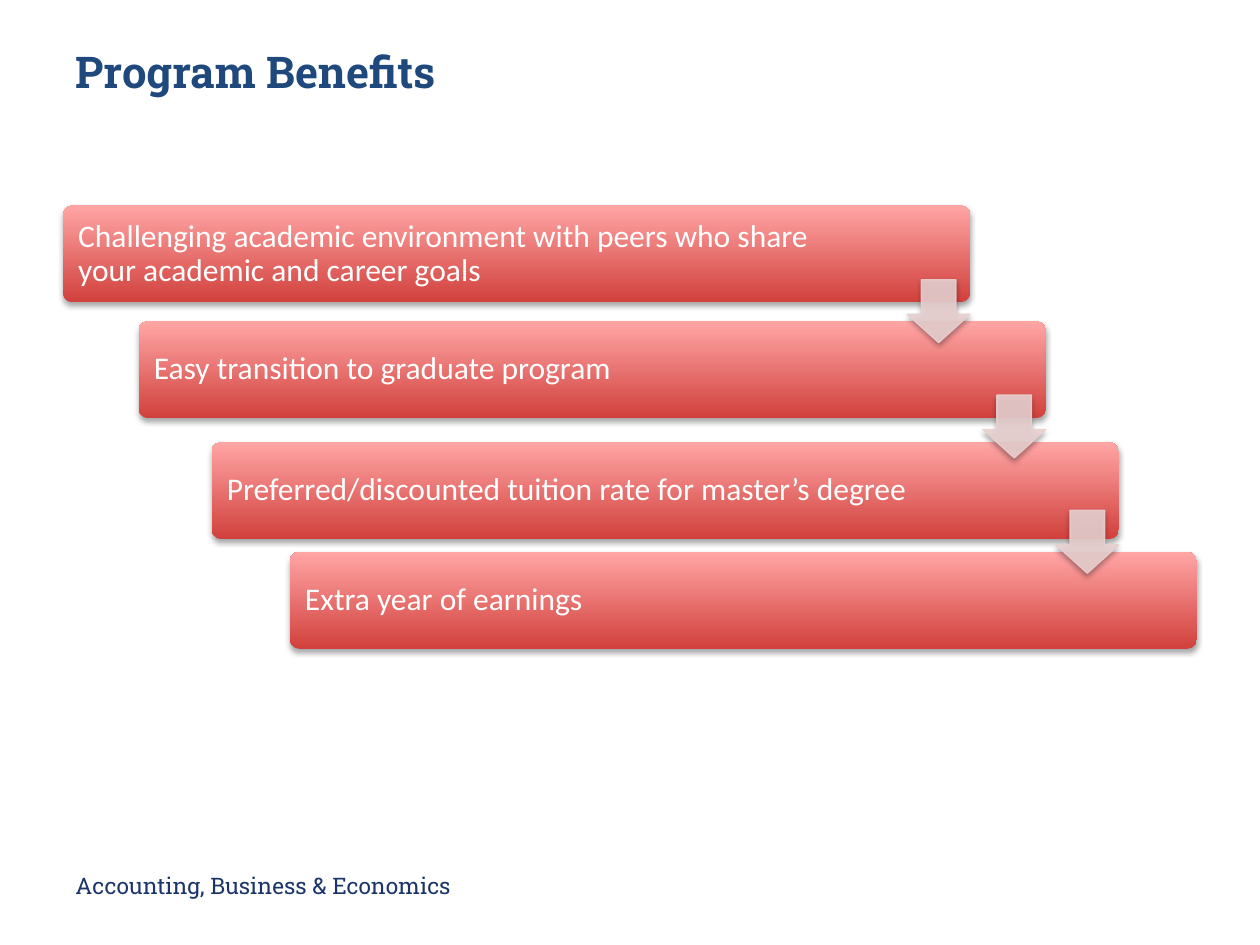
from lxml.etree import SubElement
from pptx import Presentation
from pptx.dml.color import RGBColor
from pptx.enum.shapes import MSO_SHAPE as SHAPE
from pptx.enum.text import MSO_ANCHOR as ANCHOR, PP_ALIGN as ALIGN
from pptx.oxml.ns import qn
from pptx.util import Inches, Pt

MARGIN = 0.5
BAR_W, BAR_H = 7.2, 0.77
ARROW = 0.5
# Left and top of each step, with its text
STEPS = [
    (0.5, 1.63, "Challenging academic environment with peers who share "
                "your academic and career goals"),
    (1.1, 2.55, "Easy transition to graduate program"),
    (1.68, 3.51, "Preferred/discounted tuition rate for master’s degree"),
    (2.3, 4.38, "Extra year of earnings"),
]
ARROW_TOP, ARROW_PITCH = 2.22, 0.915


def rgb(color):
    return RGBColor.from_string(color)


def place(s, *box):
    s.left, s.top, s.width, s.height = map(Inches, box)


def write(s, text, font, size, color, bold=False):
    tf = s.text_frame
    tf.word_wrap = True
    tf.vertical_anchor = ANCHOR.MIDDLE
    p = tf.paragraphs[0]
    p.text = text
    p.alignment = ALIGN.LEFT
    f = p.font
    f.name, f.size, f.bold = font, Pt(size), bold
    f.color.rgb = rgb(color)
    return p


def set_alpha(parent, percent):
    for clr in parent.iter(qn("a:srgbClr")):
        SubElement(clr, qn("a:alpha"), val=str(percent * 1000))


def add_shadow(s):
    """Soft black shadow falling straight down."""
    s.shadow.inherit = False
    effects = s._element.spPr.find(qn("a:effectLst"))
    shadow = SubElement(effects, qn("a:outerShdw"), blurRad=str(Pt(3.1)),
                        dist=str(Pt(1.8)), dir="5400000", rotWithShape="0")
    SubElement(shadow, qn("a:srgbClr"), val="000000")
    set_alpha(shadow, 35)


def add_bar(slide, left, top, text):
    s = slide.shapes.add_shape(SHAPE.ROUNDED_RECTANGLE, Inches(left),
                               Inches(top), Inches(BAR_W), Inches(BAR_H))
    s.adjustments[0] = 0.1
    s.fill.gradient()
    s.fill.gradient_angle = 90
    for stop, color in zip(s.fill.gradient_stops, ("D1403C", "FFA6A5")):
        stop.color.rgb = rgb(color)
    s.line.fill.background()
    add_shadow(s)
    tf = s.text_frame
    tf.margin_left, tf.margin_right = Inches(0.1), Inches(0.95)
    write(s, text, "Calibri", 18, "FFFFFF").line_spacing = 0.9


def add_arrow(slide, left, top):
    s = slide.shapes.add_shape(SHAPE.DOWN_ARROW, Inches(left), Inches(top),
                               Inches(ARROW), Inches(ARROW))
    s.adjustments[0], s.adjustments[1] = 0.55, 0.45
    s.fill.solid()
    s.fill.fore_color.rgb = rgb("E8D0D0")
    s.line.color.rgb = rgb("E8D0D0")
    s.line.width = Pt(0.75)
    set_alpha(s._element.spPr, 90)
    add_shadow(s)


def main():
    prs = Presentation()
    prs.slide_width, prs.slide_height = Inches(10), Inches(7.5)
    slide = prs.slides.add_slide(prs.slide_layouts[5])

    title = slide.shapes.title
    place(title, MARGIN, 0.3, 9, 0.52)
    write(title, "Program Benefits", "Roboto Slab", 25, "1F497D", bold=True)

    department = slide.shapes.add_textbox(0, 0, 0, 0)
    place(department, MARGIN, 6.83, 3.22, 0.4)
    write(department, "Accounting, Business & Economics",
          "Roboto Slab", 13, "1B356B")

    for left, top, text in STEPS:
        add_bar(slide, left, top, text)
    for i, (left, _, _) in enumerate(STEPS[:-1]):
        add_arrow(slide, left + BAR_W - ARROW, ARROW_TOP + i * ARROW_PITCH)

    prs.save("out.pptx")


if __name__ == "__main__":
    main()
